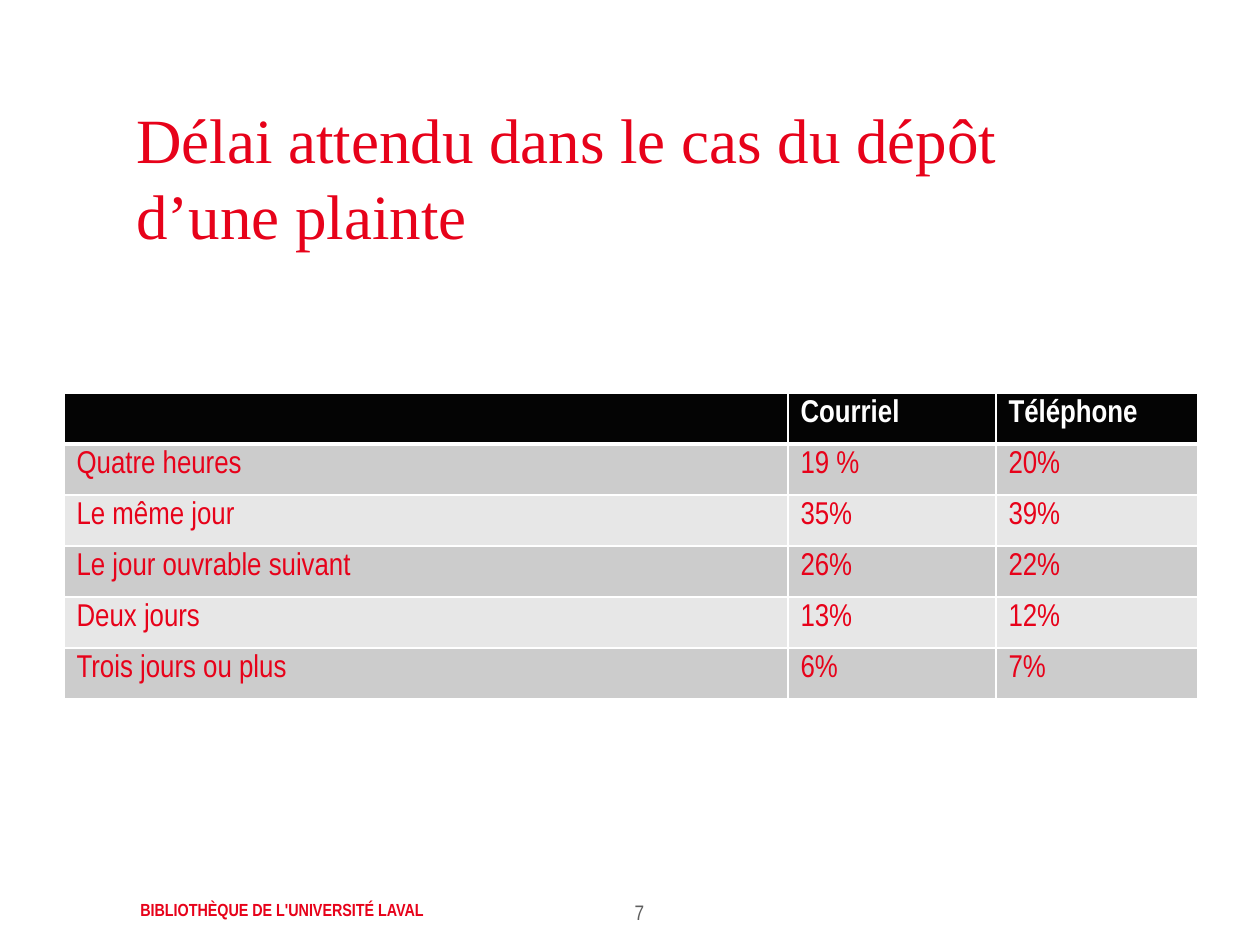
"""Build the slide on expected reply times after a complaint."""
from dataclasses import dataclass

from lxml import etree
from pptx import Presentation
from pptx.dml.color import RGBColor
from pptx.enum.text import MSO_ANCHOR, PP_ALIGN
from pptx.oxml.ns import qn
from pptx.util import Emu, Pt

TOP, MIDDLE = MSO_ANCHOR.TOP, MSO_ANCHOR.MIDDLE
LEFT, CENTER = PP_ALIGN.LEFT, PP_ALIGN.CENTER
EMU_PER_PX = 914400 / 126


@dataclass(frozen=True)
class Theme:
    red: str = "E7021A"
    grey: str = "5E5E5E"
    white: str = "FFFFFF"
    header: str = "040404"
    bands: tuple[str, str] = ("CCCCCC", "E7E7E7")
    title_font: str = "Times New Roman"
    body_font: str = "Arial Narrow"
    title_size: int = 36
    table_size: int = 18
    number_size: int = 12
    footer_size: int = 10


THEME = Theme()


@dataclass(frozen=True)
class TextStyle:
    font: str
    size: int
    color: str
    bold: bool = False


@dataclass(frozen=True)
class Label:
    text: str
    box: tuple[int, int, int, int]
    style: TextStyle
    align: PP_ALIGN = LEFT
    anchor: MSO_ANCHOR = TOP


LABELS = (
    Label("BIBLIOTHÈQUE DE L'UNIVERSITÉ LAVAL", (128, 893, 400, 34),
          TextStyle(THEME.body_font, THEME.footer_size, THEME.red, True)),
    Label("7", (341, 893, 597, 38),
          TextStyle(THEME.body_font, THEME.number_size, THEME.grey), CENTER),
    Label("Délai attendu dans le cas du dépôt d’une plainte", (124, 97, 1012, 158),
          TextStyle(THEME.title_font, THEME.title_size, THEME.red), LEFT, MIDDLE),
)
TABLE_LEFT, TABLE_TOP, ROW_HEIGHT = 64, 393, 51
COLUMN_WIDTHS = (724, 208, 202)
ROWS = (
    ("", "Courriel", "Téléphone"),
    ("Quatre heures", "19 %", "20%"),
    ("Le même jour", "35%", "39%"),
    ("Le jour ouvrable suivant", "26%", "22%"),
    ("Deux jours", "13%", "12%"),
    ("Trois jours ou plus", "6%", "7%"),
)
HEADER_STYLE = TextStyle(THEME.body_font, THEME.table_size, THEME.white, True)
BODY_STYLE = TextStyle(THEME.body_font, THEME.table_size, THEME.red)


def px(length: int) -> Emu:
    return Emu(round(length * EMU_PER_PX))


def style_font(font, style: TextStyle) -> None:
    font.name = style.font
    font.size = Pt(style.size)
    font.bold = style.bold
    font.color.rgb = RGBColor.from_string(style.color)


def add_label(slide, label: Label) -> None:
    shape = slide.shapes.add_textbox(*map(px, label.box))
    text_frame = shape.text_frame
    text_frame.word_wrap = True
    text_frame.vertical_anchor = label.anchor
    text_frame.text = label.text
    paragraph = text_frame.paragraphs[0]
    paragraph.alignment = label.align
    style_font(paragraph.runs[0].font, label.style)


def add_border(cell, side: str, points: int) -> None:
    properties = cell._tc.get_or_add_tcPr()
    line = etree.SubElement(properties, qn(f"a:ln{side}"), w=str(Pt(points)))
    fill = etree.SubElement(line, qn("a:solidFill"))
    etree.SubElement(fill, qn("a:srgbClr"), val=THEME.white)


def fill_cell(cell, text: str, row: int) -> None:
    widths = {"L": 1, "R": 1, "T": 3 if row == 1 else 1, "B": 3 if row == 0 else 1}
    for side, points in widths.items():
        add_border(cell, side, points)
    cell.fill.solid()
    color = THEME.bands[(row - 1) % 2] if row else THEME.header
    cell.fill.fore_color.rgb = RGBColor.from_string(color)
    cell.text = text
    style = BODY_STYLE if row else HEADER_STYLE
    for run in cell.text_frame.paragraphs[0].runs:
        style_font(run.font, style)


def add_delay_table(slide) -> None:
    table = slide.shapes.add_table(
        len(ROWS), len(COLUMN_WIDTHS), px(TABLE_LEFT), px(TABLE_TOP),
        px(sum(COLUMN_WIDTHS)), px(ROW_HEIGHT * len(ROWS))).table
    for column, width in zip(table.columns, COLUMN_WIDTHS):
        column.width = px(width)
    for row, texts in enumerate(ROWS):
        table.rows[row].height = px(ROW_HEIGHT)
        for column, text in enumerate(texts):
            fill_cell(table.cell(row, column), text, row)


def main() -> None:
    presentation = Presentation()
    presentation.slide_width, presentation.slide_height = px(1260), px(945)
    slide = presentation.slides.add_slide(presentation.slide_layouts[6])
    for label in LABELS:
        add_label(slide, label)
    add_delay_table(slide)
    presentation.save("out.pptx")


if __name__ == "__main__":
    main()
